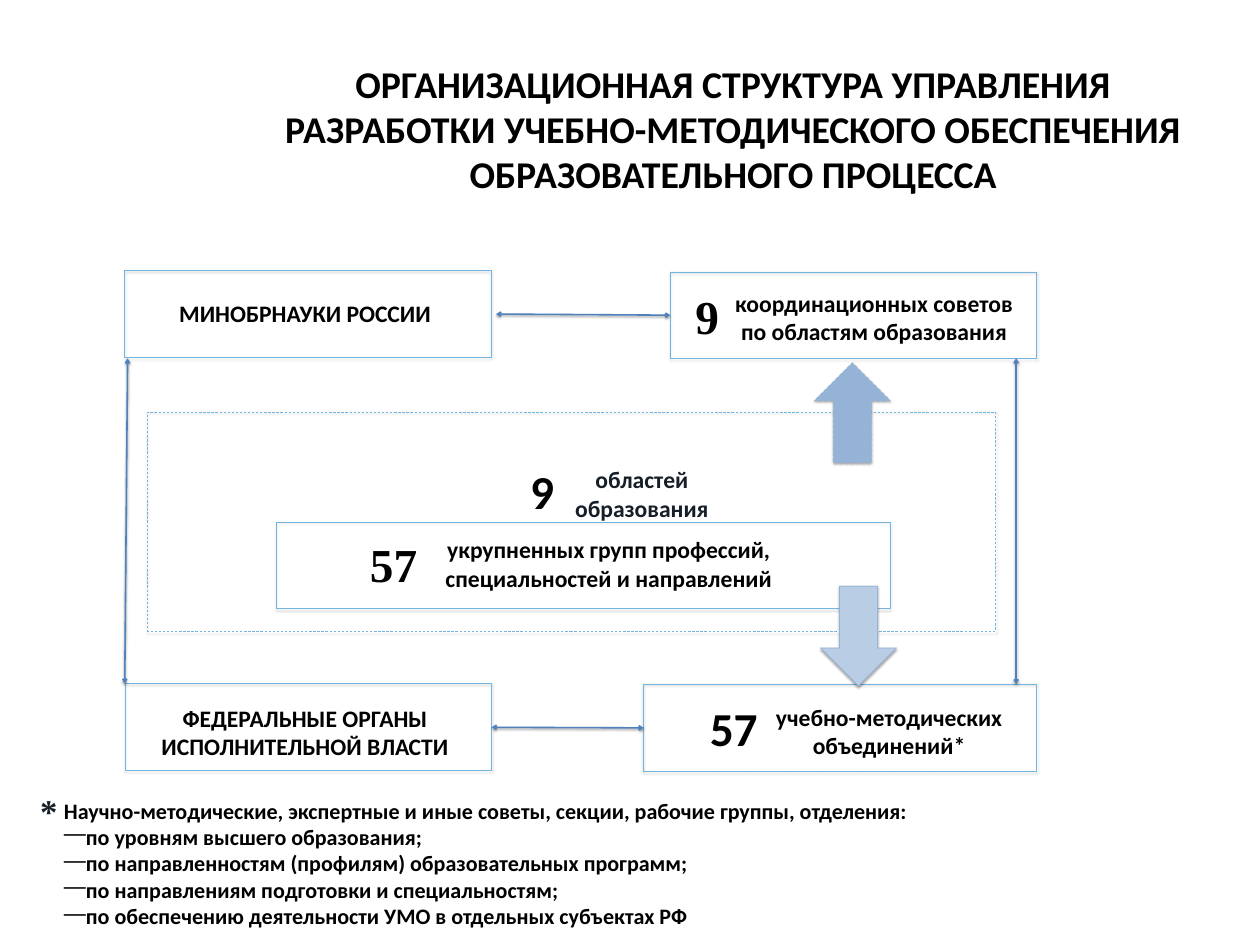
from dataclasses import dataclass

from lxml.etree import SubElement
from pptx import Presentation
from pptx.dml.color import RGBColor
from pptx.enum.dml import MSO_LINE
from pptx.enum.shapes import MSO_CONNECTOR, MSO_SHAPE
from pptx.enum.text import MSO_ANCHOR, MSO_AUTO_SIZE, PP_ALIGN
from pptx.oxml.ns import qn
from pptx.util import Inches, Pt


@dataclass(frozen=True)
class Theme:
    sans: str = "Calibri"
    serif: str = "Times New Roman"
    text: RGBColor = RGBColor(0x00, 0x00, 0x00)
    dark: RGBColor = RGBColor(0x16, 0x1F, 0x28)
    frame: RGBColor = RGBColor(0x74, 0xB5, 0xE0)
    link: RGBColor = RGBColor(0x4F, 0x81, 0xBD)
    arrow: RGBColor = RGBColor(0x95, 0xB3, 0xD7)
    pale_arrow: RGBColor = RGBColor(0xB9, 0xCD, 0xE5)
    title_size: int = 48
    label_size: int = 30
    number_size: int = 60
    note_size: int = 28
    star_size: int = 44


theme = Theme()
presentation = Presentation()
presentation.slide_width = Inches(22.22)
presentation.slide_height = Inches(16.67)
slide = presentation.slides.add_slide(presentation.slide_layouts[6])
shapes = slide.shapes


def add_text(place, lines, size, font=theme.sans, color=theme.text, align=PP_ALIGN.CENTER, bullet=None):
    """Add a bold text box; with a bullet, every line after the first is a list item."""
    frame = shapes.add_textbox(*map(Inches, place)).text_frame
    frame.word_wrap = True
    frame.auto_size = MSO_AUTO_SIZE.SHAPE_TO_FIT_TEXT
    for index, line in enumerate(lines):
        paragraph = frame.paragraphs[0] if index == 0 else frame.add_paragraph()
        paragraph.text = line
        paragraph.alignment = align
        if bullet and index:
            properties = paragraph._p.get_or_add_pPr()
            properties.set("marL", str(Inches(0.37)))
            properties.set("indent", str(Inches(-0.37)))
            SubElement(properties, qn("a:buChar"), char=bullet)
        paragraph.font.name = font
        paragraph.font.size = Pt(size)
        paragraph.font.bold = True
        paragraph.font.color.rgb = color
    return frame


def add_shadow(item, opacity, distance):
    effects = SubElement(item._element.spPr, qn("a:effectLst"))
    shadow = SubElement(effects, qn("a:outerShdw"), blurRad=str(Pt(3.1)), dist=str(Pt(distance)),
                        dir="5400000", rotWithShape="0")
    black = SubElement(shadow, qn("a:srgbClr"), val="000000")
    SubElement(black, qn("a:alpha"), val=str(opacity * 1000))


title = add_text((4.19, 1.56, 17.48, 1.41),
                 ["ОРГАНИЗАЦИОННАЯ СТРУКТУРА УПРАВЛЕНИЯ\n"
                  "РАЗРАБОТКИ УЧЕБНО-МЕТОДИЧЕСКОГО ОБЕСПЕЧЕНИЯ\n"
                  "ОБРАЗОВАТЕЛЬНОГО ПРОЦЕССА"], theme.title_size)
title.auto_size = MSO_AUTO_SIZE.NONE
title.vertical_anchor = MSO_ANCHOR.MIDDLE
title.margin_left = title.margin_right = Inches(0.22)
title.margin_top = title.margin_bottom = Inches(0.11)

labels = [
    (13.13, 12.35, 5.1, ["учебно-методических объединений*"], theme.text),
    (6.99, 9.39, 7.49, ["укрупненных групп профессий, специальностей и направлений"], theme.text),
    (9.29, 8.16, 4.06, ["областей образования"], theme.dark),
    (2.25, 12.36, 6.26, ["ФЕДЕРАЛЬНЫЕ ОРГАНЫ ИСПОЛНИТЕЛЬНОЙ ВЛАСТИ"], theme.text),
    (2.25, 5.22, 6.26, ["МИНОБРНАУКИ РОССИИ"], theme.text),
    (12.69, 5.04, 5.45, ["координационных советов", "по областям образования"], theme.text),
]
for left, top, width, lines, color in labels:
    height = 0.61 if lines == ["МИНОБРНАУКИ РОССИИ"] else 1.11
    add_text((left, top, width, height), lines, theme.label_size, color=color)

numbers = [
    (11.89, 5.02, "9", theme.serif),
    (12.36, 12.28, "57", theme.sans),
    (8.98, 8.11, "9", theme.sans),
    (6.36, 9.39, "57", theme.serif),
]
for left, top, number, font in numbers:
    add_text((left, top, 1.16, 1.11), [number], theme.number_size, font)

add_text((1.03, 14.01, 20.57, 2.46), [
    "Научно-методические, экспертные и иные советы, секции, рабочие группы, отделения:",
    "по уровням высшего образования;",
    "по направленностям (профилям) образовательных программ;",
    "по направлениям подготовки и специальностям;",
    "по обеспечению деятельности УМО в отдельных субъектах РФ",
], theme.note_size, align=PP_ALIGN.LEFT, bullet="―")
add_text((0.28, 13.89, 1.16, 0.84), ["*"], theme.star_size, theme.serif, theme.dark)

frames = [
    (2.2, 4.77, 6.46, 1.53, None),
    (11.82, 4.8, 6.46, 1.53, None),
    (2.21, 12.06, 6.46, 1.53, None),
    (11.35, 12.07, 6.93, 1.53, None),
    (4.88, 9.21, 10.82, 1.53, None),
    (2.6, 7.27, 14.96, 3.86, MSO_LINE.DASH),
]
for *place, dash in frames:
    frame = shapes.add_shape(MSO_SHAPE.RECTANGLE, *map(Inches, place))
    frame.fill.background()
    frame.line.color.rgb = theme.frame
    frame.line.width = Pt(0.75)
    frame.line.dash_style = dash
    add_shadow(frame, 35, 1.8)

links = [
    (8.67, 12.83, 11.35, 12.84),
    (8.75, 5.54, 11.82, 5.56),
    (2.25, 6.32, 2.2, 12.06),
    (17.92, 6.32, 17.92, 12.07),
]
for ends in links:
    link = shapes.add_connector(MSO_CONNECTOR.STRAIGHT, *map(Inches, ends))
    link.line.color.rgb = theme.link
    link.line.width = Pt(2)
    for end in ("a:headEnd", "a:tailEnd"):
        SubElement(link.line._get_or_add_ln(), qn(end), type="arrow")
    add_shadow(link, 38, 1.6)

block_arrows = [
    (14.36, 6.4, 180, theme.arrow, MSO_LINE.DASH),
    (14.47, 10.34, 0, theme.pale_arrow, None),
]
for left, top, rotation, color, dash in block_arrows:
    arrow = shapes.add_shape(MSO_SHAPE.DOWN_ARROW, Inches(left), Inches(top), Inches(1.34), Inches(1.76))
    arrow.rotation = rotation
    arrow.fill.solid()
    arrow.fill.fore_color.rgb = color
    arrow.line.color.rgb = theme.arrow
    arrow.line.width = Pt(1)
    arrow.line.dash_style = dash
    add_shadow(arrow, 35, 1.8)

presentation.save("out.pptx")
